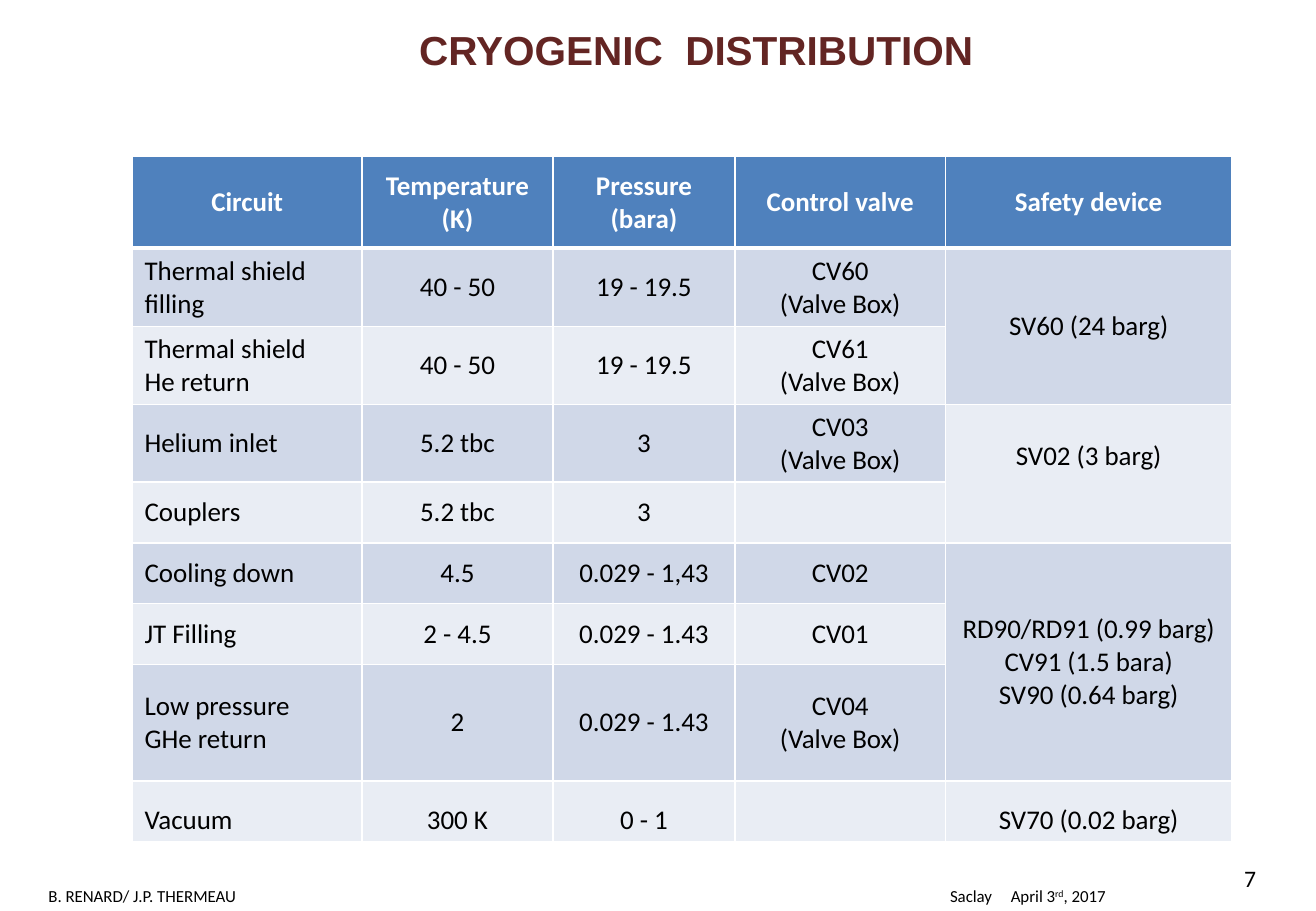
"""Builds the cryogenic distribution slide with its table of circuits."""
from lxml.etree import SubElement as Sub
from pptx import Presentation
from pptx.dml.color import RGBColor
from pptx.enum.text import MSO_ANCHOR as Anchor, PP_ALIGN as Align
from pptx.oxml.ns import qn
from pptx.util import Inches, Pt

WHITE = RGBColor(0xFF, 0xFF, 0xFF)
BLACK = RGBColor(0, 0, 0)
MAROON = RGBColor(0x63, 0x25, 0x23)
BLUE = RGBColor(0x4F, 0x81, 0xBD)
BANDS = RGBColor(0xE9, 0xED, 0xF4), RGBColor(0xD0, 0xD8, 0xE8)

TITLE = "CRYOGENIC  DISTRIBUTION"
PAGE = "7"
FOOTER = [("B. RENARD/ J.P. THERMEAU\tSaclay\tApril 3", 0), ("rd", 30), (", 2017", 0)]
STOPS = [7.42, 7.92]
ROWS = [
    ("Circuit", "Temperature\n(K)", "Pressure\n(bara)", "Control valve", "Safety device"),
    ("Thermal shield\nfilling", "40 - 50", "19 - 19.5", "CV60\n(Valve Box)", "SV60 (24 barg)"),
    ("Thermal shield\nHe return", "40 - 50", "19 - 19.5", "CV61\n(Valve Box)", ""),
    ("Helium inlet", "5.2 tbc", "3", "CV03\n(Valve Box)", "SV02 (3 barg)"),
    ("Couplers", "5.2 tbc", "3", "", ""),
    ("Cooling down", "4.5", "0.029 - 1,43", "CV02",
     "RD90/RD91 (0.99 barg)\nCV91 (1.5 bara)\nSV90 (0.64 barg)"),
    ("JT Filling", "2 - 4.5", "0.029 - 1.43", "CV01", ""),
    ("Low pressure\nGHe return", "2", "0.029 - 1.43", "CV04\n(Valve Box)", ""),
    ("Vacuum", "300 K", "0 - 1", "", "SV70 (0.02 barg)"),
]
WIDTHS = [1.89, 1.57, 1.5, 1.73, 2.36]
HEIGHTS = [0.75, 0.65, 0.64, 0.64, 0.5, 0.5, 0.5, 0.96, 0.5]
SPANS = [(1, 2, BANDS[1]), (3, 4, BANDS[0]), (5, 7, BANDS[1])]
RAISED = (3, 4)


def style(font, color, **values):
    for name, value in values.items():
        setattr(font, name, value)
    font.color.rgb = color


def add_box(slide, left, top, width, height):
    box = slide.shapes.add_textbox(*map(Inches, (left, top, width, height)))
    box.text_frame.word_wrap = True
    return box.text_frame


def add_border(cell, side, width):
    line = Sub(cell._tc.get_or_add_tcPr(), qn(f"a:ln{side}"), w=str(Pt(width)))
    Sub(Sub(line, qn("a:solidFill")), qn("a:srgbClr"), val=str(WHITE))


def fill_cell(cell, text, row, col):
    head, last = row == 0, row == len(ROWS) - 1
    cell.text = text
    cell.vertical_anchor = Anchor.MIDDLE
    for side, heavy in (("L", False), ("R", False), ("T", row == 1), ("B", head)):
        add_border(cell, side, 3 if heavy else 1)
    cell.fill.solid()
    cell.fill.fore_color.rgb = BLUE if head else BANDS[row % 2]
    if (row, col) == RAISED:
        cell.margin_bottom = Inches(0.33)
    for para in cell.text_frame.paragraphs:
        para.alignment = Align.CENTER if head or col else Align.LEFT
        para.line_spacing = 1.5 if last else 1.0
        style(para.font, WHITE if head else BLACK, name="Calibri", size=Pt(16), bold=head)


def add_grid(slide):
    frame = slide.shapes.add_table(
        len(ROWS), len(WIDTHS), Inches(1.09), Inches(1.29),
        Inches(sum(WIDTHS)), Inches(sum(HEIGHTS)))
    table = frame.table
    for col, width in zip(table.columns, WIDTHS):
        col.width = Inches(width)
    for row, height in zip(table.rows, HEIGHTS):
        row.height = Inches(height)
    for row, texts in enumerate(ROWS):
        for col, text in enumerate(texts):
            fill_cell(table.cell(row, col), text, row, col)
    for first, last, color in SPANS:
        for row in range(first, last + 1):
            table.cell(row, 4).fill.fore_color.rgb = color
        table.cell(first, 4).merge(table.cell(last, 4))


def add_footer(slide):
    para = add_box(slide, 0.3, 7.24, 9.4, 0.27).paragraphs[0]
    tabs = Sub(para._p.get_or_add_pPr(), qn("a:tabLst"))
    for stop in STOPS:
        Sub(tabs, qn("a:tab"), pos=str(Inches(stop)), algn="l")
    for text, raised in FOOTER:
        run = para.add_run()
        run.text = text
        style(run.font, BLACK, name="Calibri", size=Pt(10))
        if raised:
            run.font._element.set("baseline", str(raised * 1000))


def add_line(slide, text, place, align, color, **values):
    frame = add_box(slide, *place)
    frame.vertical_anchor = Anchor.MIDDLE
    para = frame.paragraphs[0]
    para.text = text
    para.alignment = align
    style(para.font, color, **values)


def main():
    deck = Presentation()
    deck.slide_width, deck.slide_height = Inches(10.83), Inches(7.5)
    slide = deck.slides.add_slide(deck.slide_layouts[6])
    add_footer(slide)
    add_line(slide, PAGE, (10.14, 7.06, 0.55, 0.34), Align.LEFT, BLACK,
             name="Calibri", size=Pt(14))
    add_line(slide, TITLE, (2.27, -0.03, 6.92, 0.87), Align.CENTER, MAROON,
             name="Arial", size=Pt(24), bold=True)
    add_grid(slide)
    deck.save("out.pptx")


if __name__ == "__main__":
    main()
